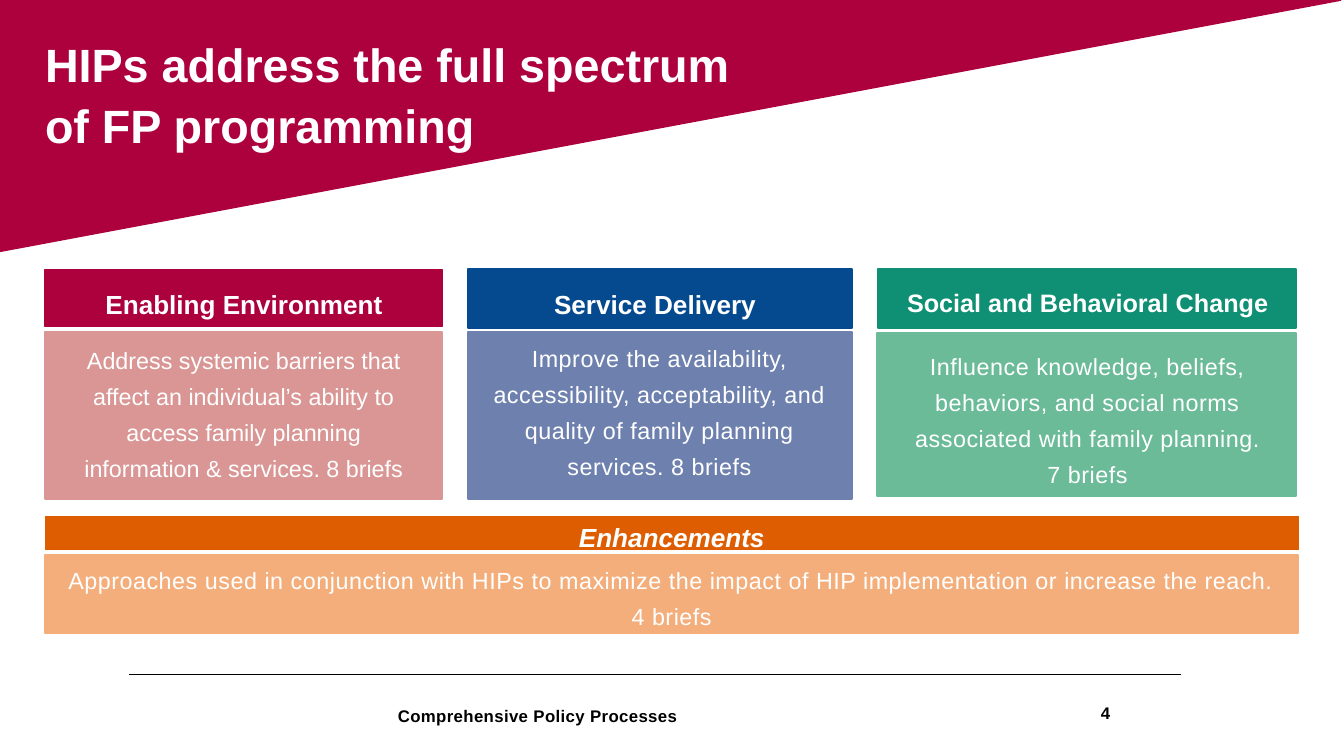
"""Build the slide on high impact practices across family planning programming."""
from dataclasses import dataclass

from lxml import etree
from pptx import Presentation
from pptx.dml.color import RGBColor
from pptx.enum.shapes import MSO_CONNECTOR, MSO_SHAPE
from pptx.enum.text import MSO_ANCHOR, PP_ALIGN
from pptx.oxml.ns import qn
from pptx.util import Emu, Pt

PX = 9144
FONT = "Arial"
RECTANGLE = MSO_SHAPE.RECTANGLE
STRAIGHT = MSO_CONNECTOR.STRAIGHT
TOP, MIDDLE = MSO_ANCHOR.TOP, MSO_ANCHOR.MIDDLE
LEFT, CENTER, RIGHT = PP_ALIGN.LEFT, PP_ALIGN.CENTER, PP_ALIGN.RIGHT

WHITE = RGBColor(0xFF, 0xFF, 0xFF)
BLACK = RGBColor(0x00, 0x00, 0x00)
CRIMSON = RGBColor(0xAD, 0x01, 0x3E)
ROSE = RGBColor(0xD9, 0x96, 0x94)
BLUE = RGBColor(0x05, 0x4A, 0x8E)
SLATE = RGBColor(0x6E, 0x81, 0xAE)
GREEN = RGBColor(0x0F, 0x8F, 0x73)
MINT = RGBColor(0x6B, 0xBB, 0x99)
ORANGE = RGBColor(0xDD, 0x5D, 0x00)
PEACH = RGBColor(0xF3, 0xAE, 0x7B)


@dataclass(frozen=True)
class Area:
    left: int
    top: int
    width: int
    height: int

    def emu(self) -> tuple[Emu, ...]:
        return tuple(Emu(v * PX) for v in (self.left, self.top, self.width, self.height))


@dataclass(frozen=True)
class Style:
    size: int = 25
    color: RGBColor = WHITE
    bold: bool = False
    italic: bool = False
    align: PP_ALIGN = CENTER
    leading: float = 38.5
    tracking: float = 0
    anchor: MSO_ANCHOR = TOP


@dataclass(frozen=True)
class Card:
    header: Area
    header_text: Area
    heading: str
    heading_size: int
    dark: RGBColor
    body: Area
    body_text: Area
    lines: tuple[str, ...]
    tracking: float
    light: RGBColor


CARDS = (
    Card(Area(67, 401, 591, 85), Area(118, 422, 490, 49), "Enabling Environment", 28, CRIMSON,
         Area(67, 494, 591, 248), Area(115, 504, 495, 209),
         ("Address systemic barriers that affect an individual’s ability to access "
          "family planning information & services. 8 briefs",), 0, ROSE),
    Card(Area(696, 401, 572, 87), Area(751, 422, 447, 49), "Service Delivery", 28, BLUE,
         Area(696, 494, 572, 248), Area(734, 501, 495, 209),
         ("Improve the availability, accessibility, acceptability, and quality of "
          "family planning services. 8 briefs",), 0.6, SLATE),
    Card(Area(1307, 401, 622, 87), Area(1349, 419, 539, 49), "Social and Behavioral Change", 27, GREEN,
         Area(1305, 495, 624, 243), Area(1305, 512, 627, 208),
         ("Influence knowledge, beliefs, behaviors, and social norms associated with "
          "family planning.", "7 briefs"), 0.6, MINT),
)


def paint(shape, color: RGBColor, line_width: float = 2) -> None:
    shape.shadow.inherit = False
    shape.fill.solid()
    shape.fill.fore_color.rgb = color
    shape.line.color.rgb = color
    shape.line.width = Pt(line_width)


def add_panel(page, area: Area, color: RGBColor, line_width: float = 2):
    panel = page.shapes.add_shape(RECTANGLE, *area.emu())
    paint(panel, color, line_width)
    return panel


def write(shape, lines: tuple[str, ...], style: Style, inset: int = 0) -> None:
    frame = shape.text_frame
    frame.word_wrap = True
    frame.vertical_anchor = style.anchor
    frame.margin_left = frame.margin_right = Emu(inset * PX)
    frame.margin_top = frame.margin_bottom = Emu(inset * PX // 2)
    for index, line in enumerate(lines):
        para = frame.add_paragraph() if index else frame.paragraphs[0]
        para.alignment = style.align
        para.line_spacing = Pt(style.leading)
        font = para.font
        font.name, font.size = FONT, Pt(style.size)
        font.bold, font.italic = style.bold, style.italic
        font.color.rgb = style.color
        span = para.add_run()
        span.text = line
        if style.tracking:
            span._r.get_or_add_rPr().set("spc", str(round(style.tracking * 100)))


def add_text(page, area: Area, lines: tuple[str, ...], style: Style) -> None:
    write(page.shapes.add_textbox(*area.emu()), lines, style)


def add_banner(page) -> None:
    builder = page.shapes.build_freeform(-1, 0, scale=PX)
    builder.add_line_segments([(-1, 374), (1995, 0)], close=True)
    paint(builder.convert_to_shape(), CRIMSON)
    add_text(page, Area(67, 47, 1058, 182), ("HIPs address the full spectrum of FP programming",),
             Style(50, bold=True, align=LEFT, leading=65))


def add_card(page, card: Card) -> None:
    add_panel(page, card.body, card.light)
    add_panel(page, card.header, card.dark)
    add_text(page, card.header_text, (card.heading,), Style(card.heading_size, bold=True))
    add_text(page, card.body_text, card.lines, Style(tracking=card.tracking))


def add_enhancements(page) -> None:
    add_panel(page, Area(67, 826, 1865, 116), PEACH)
    heading = add_panel(page, Area(67, 769, 1865, 49), ORANGE, 0.75)
    write(heading, ("Enhancements",), Style(28, bold=True, italic=True))
    body = add_panel(page, Area(90, 841, 1819, 86), PEACH)
    write(body, ("Approaches used in conjunction with HIPs to maximize the impact of HIP "
                 "implementation or increase the reach. 4 briefs",),
          Style(tracking=0.6, anchor=MIDDLE), inset=10)


def add_footer(page) -> None:
    rule = page.shapes.add_connector(STRAIGHT, *Area(192, 1004, 1758, 1004).emu())
    rule.line.color.rgb = BLACK
    rule.line.width = Pt(0.75)
    etree.SubElement(rule._element.spPr, qn("a:effectLst"))
    add_text(page, Area(592, 1045, 900, 33), ("Comprehensive Policy Processes",),
             Style(18, BLACK, bold=True, align=LEFT, leading=25.2, tracking=0.4))
    number = page.shapes.add_textbox(*Area(1578, 1045, 84, 33).emu())
    write(number, ("4",), Style(18, BLACK, bold=True, align=RIGHT, leading=21, anchor=MIDDLE), inset=10)


def main() -> None:
    deck = Presentation()
    deck.slide_width, deck.slide_height = Emu(2000 * PX), Emu(1125 * PX)
    page = deck.slides.add_slide(deck.slide_layouts[6])
    add_footer(page)
    add_banner(page)
    for card in CARDS:
        add_card(page, card)
    add_enhancements(page)
    deck.save("out.pptx")


if __name__ == "__main__":
    main()
